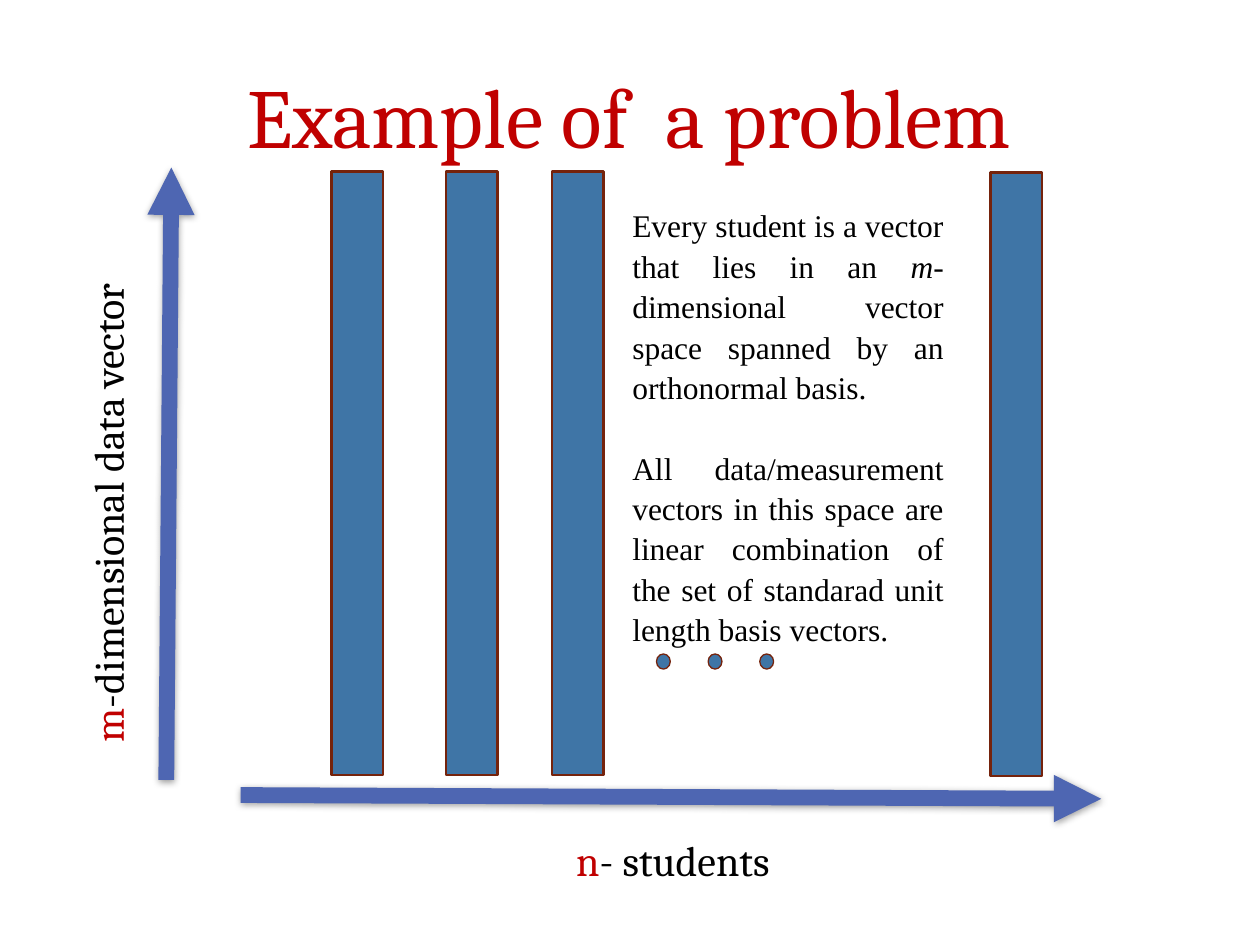
from lxml.etree import SubElement as Sub
from pptx import Presentation
from pptx.dml.color import RGBColor
from pptx.enum.shapes import MSO_CONNECTOR as Conn, MSO_SHAPE as Kind
from pptx.enum.text import MSO_ANCHOR as Anchor, PP_ALIGN as Align
from pptx.oxml.ns import qn
from pptx.util import Inches, Pt

RED, BLACK = "C00000", "000000"
FILL, EDGE, AXIS = "3F75A6", "75230C", "4E66B2"
SERIF, BODY = "Cambria", "Times New Roman"


def color(text):
    return RGBColor.from_string(text)


class Deck:
    def __init__(self):
        self.show = Presentation()
        self.show.slide_width, self.show.slide_height = Inches(10), Inches(7.5)
        self.slide = self.show.slides.add_slide(self.show.slide_layouts[5])

    def style(self, run, size, face, tint, italic=False):
        font = run.font
        font.size, font.name, font.italic = Pt(size), face, italic
        font.color.rgb = color(tint)

    def title(self, text, box):
        shape = self.slide.shapes.title
        shape.left, shape.top, shape.width, shape.height = map(Inches, box)
        frame = shape.text_frame
        frame.text = text
        frame.vertical_anchor = Anchor.MIDDLE
        frame.paragraphs[0].alignment = Align.CENTER
        self.style(frame.paragraphs[0].runs[0], 48, SERIF, RED)

    def text(self, paras, box, size, face, align, after, turn=None):
        """Each paragraph is a list of (text, colour, italic) runs."""
        frame = self.slide.shapes.add_textbox(*map(Inches, box)).text_frame
        frame.word_wrap = True
        frame.vertical_anchor = Anchor.MIDDLE
        if turn:
            frame._txBody.bodyPr.set("vert", turn)
        for i, parts in enumerate(paras):
            para = frame.add_paragraph() if i else frame.paragraphs[0]
            para.alignment, para.line_spacing = align, 1.07
            para.space_after = Pt(after if i == 0 else 0)
            for words, tint, italic in parts:
                run = para.add_run()
                run.text = words
                self.style(run, size, face, tint, italic)

    def shape(self, kind, box, weight):
        shape = self.slide.shapes.add_shape(kind, *map(Inches, box))
        shape.shadow.inherit = False
        shape.fill.solid()
        shape.fill.fore_color.rgb = color(FILL)
        shape.line.color.rgb = color(EDGE)
        shape.line.width = Pt(weight)

    def arrow(self, start, end):
        line = self.slide.shapes.add_connector(
            Conn.STRAIGHT, *map(Inches, start + end))
        line.line.color.rgb = color(AXIS)
        line.line.width = Pt(9)
        Sub(line.line._get_or_add_ln(), qn("a:tailEnd"), type="triangle")
        # Soft shadow below the line
        fx = Sub(line._element.spPr, qn("a:effectLst"))
        shade = Sub(fx, qn("a:outerShdw"), blurRad=str(Pt(4)),
                    dist=str(Pt(1)), dir="5400000", rotWithShape="0")
        tint = Sub(shade, qn("a:srgbClr"), val=BLACK)
        Sub(tint, qn("a:alpha"), val="37000")


def main():
    deck = Deck()
    deck.title("Example of  a problem", (0.6, 0.48, 8.79, 0.86))

    # Axes
    deck.arrow((1.91, 6.31), (8.74, 6.34))
    deck.arrow((1.32, 6.19), (1.36, 1.33))

    # One column per student
    for left, top in ((2.63, 1.36), (3.54, 1.36), (4.38, 1.36), (7.86, 1.37)):
        deck.shape(Kind.RECTANGLE, (left, top, 0.41, 4.79), 1.5)

    # Explanation
    deck.text([
        [("Every student is a vector that lies in an ", BLACK, False),
         ("m", BLACK, True),
         ("-dimensional vector space spanned by an orthonormal basis. ",
          BLACK, False)],
        [("All data/measurement vectors in this space are linear combination "
          "of the set of standarad unit length basis vectors.",
          BLACK, False)],
    ], (4.92, 1.58, 2.67, 3.6), 18, BODY, Align.JUSTIFY, 23)

    # Dots for the columns left out
    for i in range(3):
        deck.shape(Kind.OVAL, (5.21 + 0.41 * i, 5.19, 0.11, 0.12), 0.75)

    # Axis labels
    for sign, words, box, turn in (
            ("n", "- students", (3.09, 6.52, 4.5, 0.58), None),
            ("m", "-dimensional data vector", (0.54, 1.94, 0.59, 4.26),
             "vert270")):
        deck.text([[(sign, RED, False), (words, BLACK, False)]],
                  box, 24, SERIF, Align.CENTER, 8, turn)

    deck.show.save("out.pptx")


if __name__ == "__main__":
    main()
